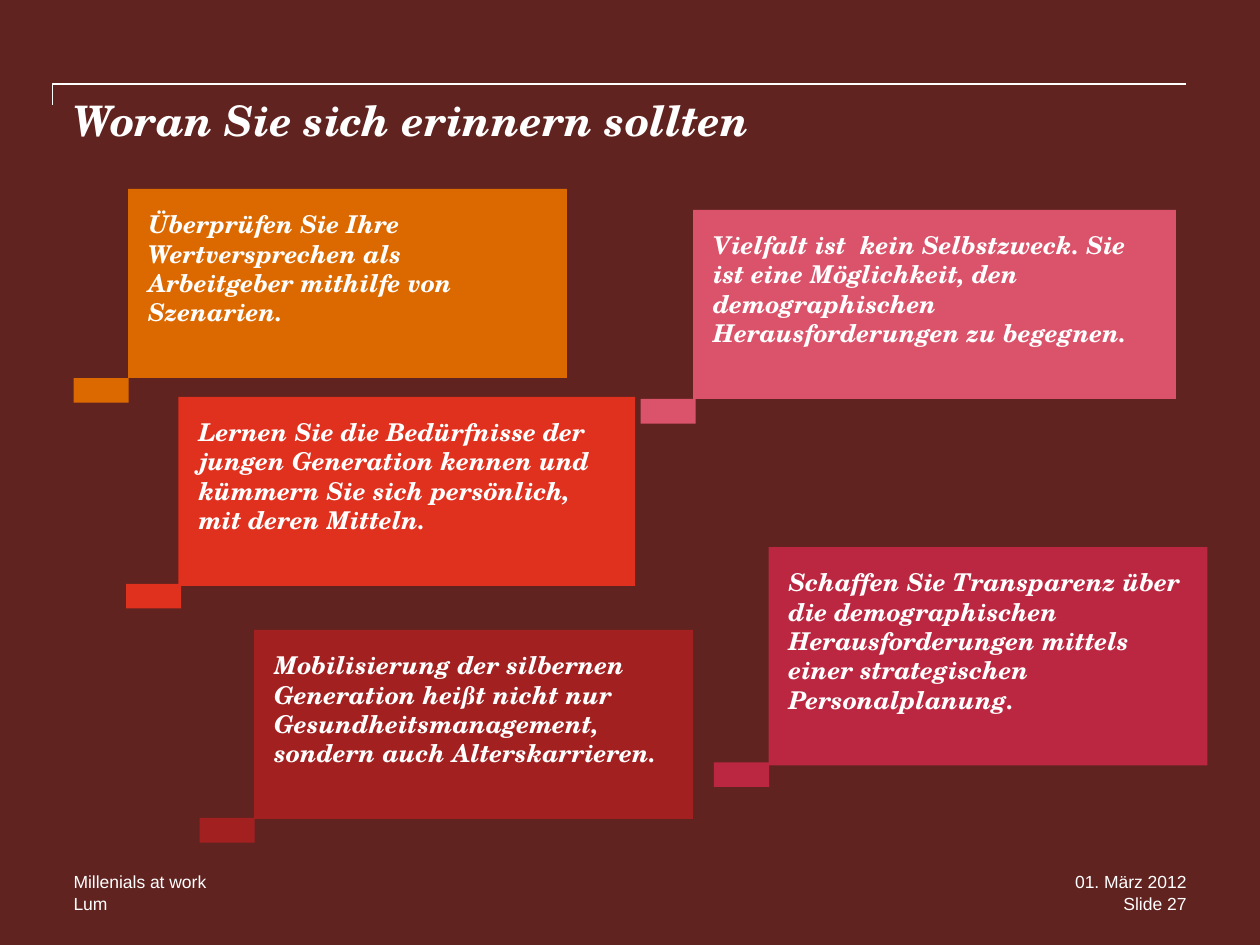
"""Build a dark slide with five tabbed notes below a ruled title."""
from dataclasses import dataclass

import pptx
import pptx.dml.color
import pptx.enum.shapes
import pptx.enum.text
import pptx.util

RGB = pptx.dml.color.RGBColor
ALIGN = pptx.enum.text.PP_ALIGN
ANCHOR = pptx.enum.text.MSO_ANCHOR
RECT = pptx.enum.shapes.MSO_SHAPE.RECTANGLE

WINE = RGB(0x60, 0x23, 0x20)
WHITE = RGB(0xFF, 0xFF, 0xFF)
AMBER = RGB(0xDC, 0x69, 0x00)
BRICK = RGB(0xA3, 0x20, 0x20)
BERRY = RGB(0xBB, 0x27, 0x40)
RED = RGB(0xE0, 0x30, 0x1E)
ROSE = RGB(0xDB, 0x53, 0x6A)

SERIF, SANS = "TeX Gyre Schola", "Arial"
COLS, ROWS = 120, 90
WIDTH, HEIGHT = pptx.util.Inches(10), pptx.util.Inches(7.5)
TAB_W, TAB_H = 5.25, 2.35
PAD, FOOT = pptx.util.Inches(0.16), pptx.util.Inches(0.39)


@dataclass
class Area:
    """A block of grid cells."""
    col: float
    row: float
    wide: float
    high: float

    def place(self) -> tuple[int, int, int, int]:
        """Return left, top, width and height in slide units."""
        return (round(self.col * WIDTH / COLS), round(self.row * HEIGHT / ROWS),
                round(self.wide * WIDTH / COLS), round(self.high * HEIGHT / ROWS))


@dataclass
class Note:
    """A text box with a small tab at its lower left."""
    area: Area
    tab_col: float
    tab_row: float
    color: RGB
    text: str


@dataclass
class Label:
    """A short line of small print."""
    area: Area
    text: str
    align: ALIGN = ALIGN.LEFT


NOTES = [
    Note(Area(12.2, 18, 41.8, 18), 7, 36, AMBER,
         "Überprüfen Sie Ihre Wertversprechen als Arbeitgeber mithilfe von Szenarien."),
    Note(Area(24.2, 60, 41.8, 18), 19, 77.9, BRICK,
         "Mobilisierung der silbernen Generation heißt nicht nur "
         "Gesundheitsmanagement, sondern auch Alterskarrieren."),
    Note(Area(73.2, 52.1, 41.8, 20.8), 68, 72.6, BERRY,
         "Schaffen Sie Transparenz über die demographischen Herausforderungen "
         "mittels einer strategischen Personalplanung."),
    Note(Area(17, 37.8, 43.5, 18), 12, 55.6, RED,
         "Lernen Sie die Bedürfnisse der jungen Generation kennen und kümmern "
         "Sie sich persönlich, mit deren Mitteln."),
    Note(Area(66, 20, 46, 18), 61, 38, ROSE,
         "Vielfalt ist  kein Selbstzweck. Sie ist eine Möglichkeit, den "
         "demographischen Herausforderungen zu begegnen."),
]

LABELS = [
    Label(Area(7, 83, 69, 2), "Millenials at work"),
    Label(Area(7, 85, 34, 2), "Lum"),
    Label(Area(93, 83, 20, 2), "01. März 2012", ALIGN.RIGHT),
    Label(Area(93, 85, 20, 2), "Slide 27", ALIGN.RIGHT),
]


def write(shape, text: str, face: str, size: int, bold: bool,
          align: ALIGN = ALIGN.LEFT, pad: int = 0, foot: int = 0) -> None:
    """Fill a shape with one styled paragraph."""
    frame = shape.text_frame
    frame.text = text
    frame.word_wrap = True
    frame.auto_size = pptx.enum.text.MSO_AUTO_SIZE.NONE
    frame.vertical_anchor = ANCHOR.TOP
    frame.margin_left = frame.margin_right = frame.margin_top = pad
    frame.margin_bottom = foot
    line = frame.paragraphs[0]
    line.alignment = align
    for run in line.runs:
        run.font.name = face
        run.font.size = pptx.util.Pt(size)
        run.font.bold = run.font.italic = bold
        run.font.color.rgb = WHITE


def draw_block(shapes, area: Area, color: RGB):
    """Draw a flat rectangle."""
    block = shapes.add_shape(RECT, *area.place())
    block.shadow.inherit = False
    block.fill.solid()
    block.fill.fore_color.rgb = color
    block.line.fill.background()
    return block


def draw_note(slide, note: Note) -> None:
    """Draw a note and its tab as one group."""
    group = slide.shapes.add_group_shape()
    block = draw_block(group.shapes, note.area, note.color)
    write(block, note.text, SERIF, 14, True, pad=PAD, foot=FOOT)
    draw_block(group.shapes, Area(note.tab_col, note.tab_row, TAB_W, TAB_H), note.color)


def draw_label(slide, label: Label) -> None:
    """Draw a line of small print."""
    box = slide.shapes.add_textbox(*label.area.place())
    write(box, label.text, SANS, 10, False, label.align)


def draw_rule(slide) -> None:
    """Draw the bent rule above the title."""
    pen = slide.shapes.build_freeform(5, 10, scale=WIDTH / COLS)
    pen.add_line_segments([(5, 8), (113, 8)], close=False)
    rule = pen.convert_to_shape()
    rule.shadow.inherit = False
    rule.fill.background()
    rule.line.color.rgb = WHITE
    rule.line.width = pptx.util.Pt(1)


def main() -> None:
    """Build and save the slide."""
    deck = pptx.Presentation()
    deck.slide_width, deck.slide_height = WIDTH, HEIGHT
    slide = deck.slides.add_slide(deck.slide_layouts.get_by_name("Title Only"))
    slide.background.fill.solid()
    slide.background.fill.fore_color.rgb = WINE
    draw_rule(slide)
    title = slide.shapes.title
    title.left, title.top, title.width, title.height = Area(7, 9, 106, 12).place()
    write(title, "Woran Sie sich erinnern sollten", SERIF, 24, True)
    for note in NOTES:
        draw_note(slide, note)
    for label in LABELS:
        draw_label(slide, label)
    deck.save("out.pptx")


if __name__ == "__main__":
    main()
